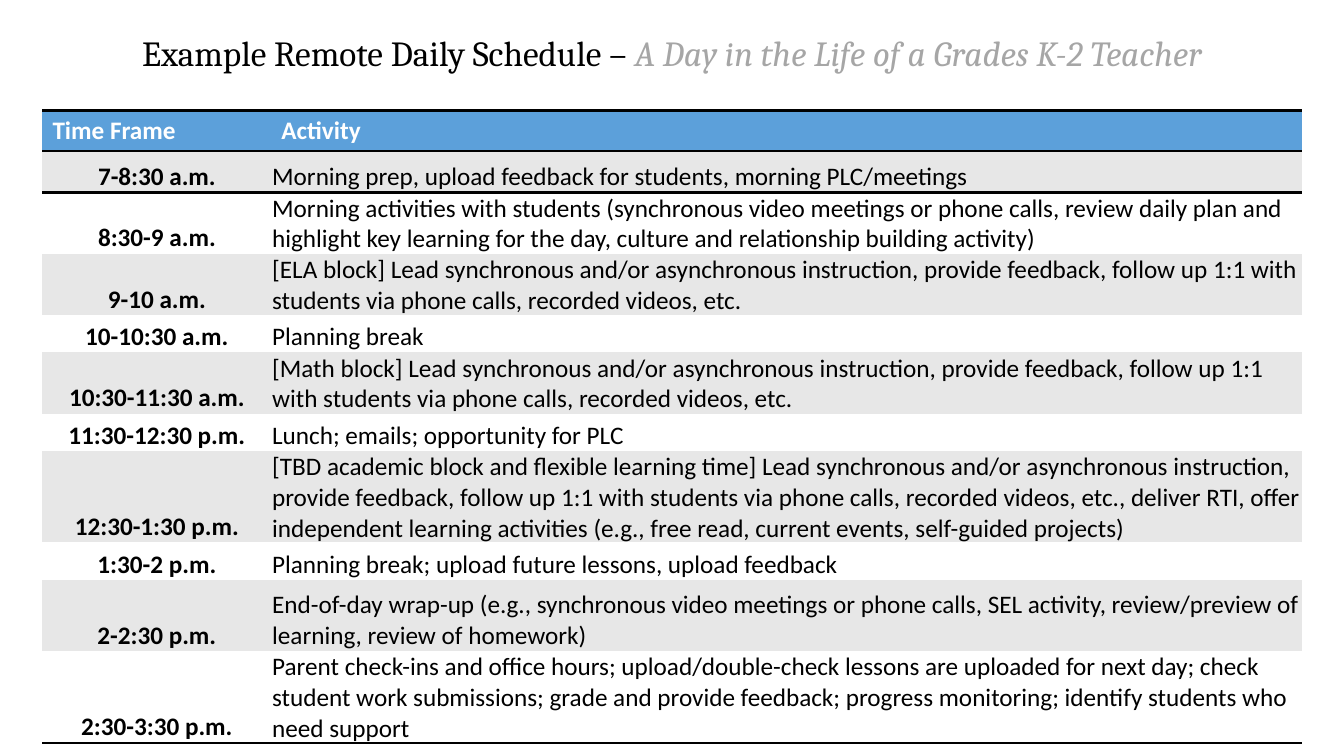
from dataclasses import dataclass

import pptx
import pptx.dml.color
import pptx.enum.text
import pptx.oxml
import pptx.oxml.ns
import pptx.presentation
import pptx.slide
import pptx.table
import pptx.text.text
import pptx.util

Cm = pptx.util.Cm
Pt = pptx.util.Pt
RGBColor = pptx.dml.color.RGBColor
PP_ALIGN = pptx.enum.text.PP_ALIGN
MSO_ANCHOR = pptx.enum.text.MSO_ANCHOR

BLACK = RGBColor(0x00, 0x00, 0x00)
WHITE = RGBColor(0xFF, 0xFF, 0xFF)
GREY_TEXT = RGBColor(0xA6, 0xA6, 0xA6)
HEADER_BLUE = RGBColor(0x5C, 0xA0, 0xDA)
BAND_GREY = RGBColor(0xE7, 0xE7, 0xE7)

PLAIN_TABLE_STYLE = "{2D5ABB26-0587-4C30-8999-92F81FD0307C}"
ROW_HEIGHT = 0.94
COLUMN_WIDTHS = (5.77, 25.98)
HEADER_HEIGHT = 0.97
HEADINGS = ("Time Frame", "Activity")


@dataclass(frozen=True)
class Period:
    time: str
    activity: str
    height: float = ROW_HEIGHT


PERIODS = (
    Period("7-8:30 a.m.",
           "Morning prep, upload feedback for students, morning PLC/meetings", 1.04),
    Period("8:30-9 a.m.",
           "Morning activities with students (synchronous video meetings or phone calls, "
           "review daily plan and\n"
           "highlight key learning for the day, culture and relationship building activity)"),
    Period("9-10 a.m.",
           "[ELA block] Lead synchronous and/or asynchronous instruction, provide feedback, "
           "follow up 1:1 with\n"
           "students via phone calls, recorded videos, etc."),
    Period("10-10:30 a.m.", "Planning break"),
    Period("10:30-11:30 a.m.",
           "[Math block] Lead synchronous and/or asynchronous instruction, provide feedback, "
           "follow up 1:1 with students via phone calls, recorded videos, etc.", 1.47),
    Period("11:30-12:30 p.m.", "Lunch; emails; opportunity for PLC"),
    Period("12:30-1:30 p.m.",
           "[TBD academic block and flexible learning time] Lead synchronous and/or "
           "asynchronous instruction,\n"
           "provide feedback, follow up 1:1 with students via phone calls, recorded videos, "
           "etc., deliver RTI, offer independent learning activities (e.g., free read, "
           "current events, self-guided projects)"),
    Period("1:30-2 p.m.", "Planning break; upload future lessons, upload feedback"),
    Period("2-2:30 p.m.",
           "End-of-day wrap-up (e.g., synchronous video meetings or phone calls, SEL activity, "
           "review/preview of learning, review of homework)", 1.8),
    Period("2:30-3:30 p.m.",
           "Parent check-ins and office hours; upload/double-check lessons are uploaded for "
           "next day; check\n"
           "student work submissions; grade and provide feedback; progress monitoring; "
           "identify students who\n"
           "need support"),
)


def style_font(font: pptx.text.text.Font, color: RGBColor, **settings: object) -> None:
    font.color.rgb = color
    for attribute, value in settings.items():
        setattr(font, attribute, value)


def add_title(slide: pptx.slide.Slide) -> None:
    frame = slide.shapes.add_textbox(Cm(2.33), Cm(0.3), Cm(29.21), Cm(2.18)).text_frame
    frame.word_wrap = True
    frame.vertical_anchor = MSO_ANCHOR.MIDDLE
    line = frame.paragraphs[0]
    line.alignment = PP_ALIGN.CENTER
    line.line_spacing = 0.9
    for wording, color, italic in (
        ("Example Remote Daily Schedule – ", BLACK, False),
        ("A Day in the Life of a Grades K-2 Teacher", GREY_TEXT, True),
    ):
        run = line.add_run()
        run.text = wording
        style_font(run.font, color, name="Cambria", size=Pt(25.2), italic=italic)


def fill_cell(cell: pptx.table._Cell, wording: str, fill: RGBColor, color: RGBColor,
              bold: bool, alignment: PP_ALIGN = PP_ALIGN.LEFT) -> None:
    cell.text = wording
    cell.fill.solid()
    cell.fill.fore_color.rgb = fill
    for paragraph in cell.text_frame.paragraphs:
        paragraph.alignment = alignment
        for run in paragraph.runs:
            style_font(run.font, color, name="Calibri", size=Pt(18), bold=bold)


def rule_cell(cell: pptx.table._Cell, *edges: str) -> None:
    """Draw a black 2 pt border on the given edges, listed in the order T, B."""
    properties = cell._tc.get_or_add_tcPr()
    for position, edge in enumerate(edges):
        properties.insert(position, pptx.oxml.parse_xml(
            f'<a:ln{edge} {pptx.oxml.ns.nsdecls("a")} w="{Pt(2)}">'
            f'<a:solidFill><a:srgbClr val="{BLACK}"/></a:solidFill></a:ln{edge}>'))


def add_schedule(slide: pptx.slide.Slide) -> None:
    heights = [HEADER_HEIGHT, *(period.height for period in PERIODS)]
    frame = slide.shapes.add_table(len(heights), len(COLUMN_WIDTHS), Cm(1.07), Cm(2.79),
                                   Cm(sum(COLUMN_WIDTHS)), Cm(sum(heights)))
    schedule = frame.table
    schedule.first_row = True
    schedule.horz_banding = False
    schedule._tbl.tblPr.find(pptx.oxml.ns.qn("a:tableStyleId")).text = PLAIN_TABLE_STYLE
    for column, width in zip(schedule.columns, COLUMN_WIDTHS):
        column.width = Cm(width)
    for row, height in zip(schedule.rows, heights):
        row.height = Cm(height)

    for column, heading in enumerate(HEADINGS):
        cell = schedule.cell(0, column)
        fill_cell(cell, heading, HEADER_BLUE, WHITE, bold=True)
        rule_cell(cell, "T", "B")

    tight_cell = {
        "vertical_anchor": MSO_ANCHOR.BOTTOM,
        "margin_left": Cm(0.02),
        "margin_right": Cm(0.02),
        "margin_top": Cm(0.02),
        "margin_bottom": Cm(0),
    }
    for number, period in enumerate(PERIODS, start=1):
        band = BAND_GREY if number % 2 else WHITE
        time, activity = schedule.rows[number].cells
        fill_cell(time, period.time, band, BLACK, bold=True, alignment=PP_ALIGN.CENTER)
        fill_cell(activity, period.activity, band, BLACK, bold=False)
        for cell in (time, activity):
            for attribute, value in tight_cell.items():
                setattr(cell, attribute, value)
            if number == 1:
                rule_cell(cell, "T")
            if number == len(PERIODS):
                rule_cell(cell, "B")


def main() -> None:
    deck = pptx.Presentation()
    deck.slide_width = Cm(33.87)
    deck.slide_height = Cm(19.05)
    slide = deck.slides.add_slide(deck.slide_layouts[6])
    add_title(slide)
    add_schedule(slide)
    deck.save("out.pptx")


if __name__ == "__main__":
    main()
